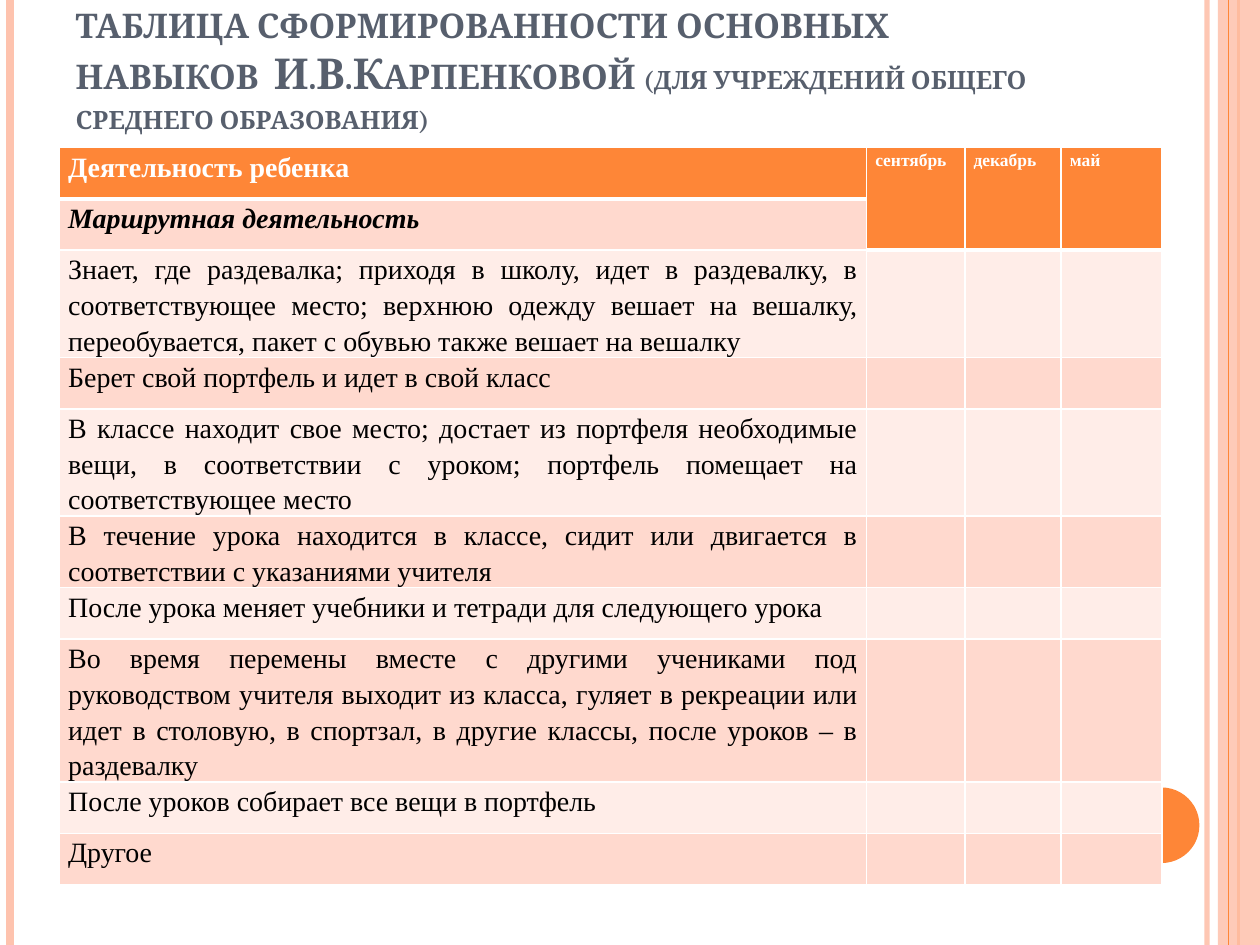
"""Build a slide with a table of a pupil's basic skills."""
from lxml.etree import SubElement
from pptx import Presentation
from pptx.dml.color import RGBColor
from pptx.enum.shapes import MSO_CONNECTOR, MSO_SHAPE
from pptx.enum.text import MSO_ANCHOR, MSO_AUTO_SIZE, PP_ALIGN
from pptx.oxml.ns import qn
from pptx.util import Pt

TITLE = [
    ("таблица сформированности основных навыков  И.В.Карпенковой ", 24.3),
    ("(для учреждений общего среднего образования)", 18),
]
HEAD = ["Деятельность ребенка", "сентябрь", "декабрь", "май"]
ROWS = [
    "Маршрутная деятельность",
    "Знает, где раздевалка; приходя в школу, идет в раздевалку, в соответствующее место; "
    "верхнюю одежду вешает на вешалку, переобувается, пакет с обувью также вешает на вешалку",
    "Берет свой портфель и идет в свой класс",
    "В классе находит свое место; достает из портфеля необходимые вещи, "
    "в соответствии с уроком; портфель помещает на соответствующее место",
    "В течение урока находится в классе, сидит или двигается "
    "в соответствии с указаниями учителя",
    "После урока меняет учебники и тетради для следующего урока",
    "Во время перемены вместе с другими учениками под руководством учителя выходит из класса, "
    "гуляет в рекреации или идет в столовую, в спортзал, в другие классы, "
    "после уроков – в раздевалку",
    "После уроков собирает все вещи в портфель",
    "Другое",
]
HUES = {"main": "FE8637", "pale": "FEC3AE", "odd": "FFD9CE", "even": "FFEDE8",
        "title": "575F6D", "white": "FFFFFF", "black": "000000"}
WIDE, HIGH = 720, 540
COLS = [461.2, 56.2, 55, 57.6]
ROW = 29.3
BARS = [(689.8, "pale", 3, 93), (5.8, "pale", 4.5, 100), (707.8, "main", 1.5, 100)]
EDGE = (702, "main", 0.75, 100)


def hue(name):
    return RGBColor.from_string(HUES[name])


def fade(part, alpha):
    for node in part.iter(qn("a:srgbClr")):
        SubElement(node, qn("a:alpha"), val=str(alpha * 1000))


def add_bar(slide, x, name, size, alpha):
    bar = slide.shapes.add_connector(MSO_CONNECTOR.STRAIGHT, Pt(x), 0, Pt(x), Pt(HIGH))
    bar.line.color.rgb = hue(name)
    bar.line.width = Pt(size)
    props = bar.element.spPr
    if alpha < 100:
        fade(props, alpha)
    SubElement(props, qn("a:effectLst"))


def add_form(slide, kind, box, name):
    form = slide.shapes.add_shape(kind, *map(Pt, box))
    form.shadow.inherit = False
    form.fill.solid()
    form.fill.fore_color.rgb = hue(name)
    form.line.fill.background()
    return form


def add_title(slide):
    title = slide.shapes.title
    title.left, title.top, title.width, title.height = map(Pt, (36, 21.6, 588.2, 90))
    frame = title.text_frame
    frame.auto_size = MSO_AUTO_SIZE.NONE
    frame.word_wrap = True
    frame.vertical_anchor = MSO_ANCHOR.BOTTOM
    frame.margin_bottom = Pt(34)
    para = frame.paragraphs[0]
    para.alignment = PP_ALIGN.LEFT
    for text, size in TITLE:
        run = para.add_run()
        run.text = text
        style(run, "Cambria", size, "title", True)
        run.font._element.set("cap", "small")


def style(run, face, size, name, bold):
    font = run.font
    font.name, font.size, font.bold = face, Pt(size), bold
    font.color.rgb = hue(name)


def edge(cell, row):
    props = cell._tc.get_or_add_tcPr()
    for side in "LRTB":
        thick = (row, side) in ((0, "B"), (1, "T"))
        line = SubElement(props, qn("a:ln" + side), w=str(Pt(3 if thick else 1)))
        fill = SubElement(line, qn("a:solidFill"))
        SubElement(fill, qn("a:srgbClr"), val=HUES["white"])


def add_cell(cell, row, col, text):
    cell.margin_left = cell.margin_right = Pt(5)
    cell.margin_top = cell.margin_bottom = 0
    edge(cell, row)
    head = row == 0 or (row == 1 and col > 0)
    cell.fill.solid()
    cell.fill.fore_color.rgb = hue("main" if head else "odd" if row % 2 else "even")
    if not text:
        return
    cell.text_frame.text = text
    para = cell.text_frame.paragraphs[0]
    para.line_spacing = 1.15
    para.alignment = PP_ALIGN.LEFT if row == col == 0 else PP_ALIGN.JUSTIFY
    run = para.runs[0]
    style(run, "Times New Roman", 10 if col else 16, "white" if head else "black", row < 2)
    run.font.italic = row == 1


def add_grid(slide):
    data = [HEAD] + [[text, "", "", ""] for text in ROWS]
    grid = slide.shapes.add_table(len(data), len(COLS), Pt(34), Pt(84.4),
                                  Pt(sum(COLS)), Pt(ROW * len(data))).table
    grid.horz_banding = False
    for col, width in enumerate(COLS):
        grid.columns[col].width = Pt(width)
    for row, texts in enumerate(data):
        for col, text in enumerate(texts):
            add_cell(grid.cell(row, col), row, col, text)
    for col in range(1, len(COLS)):
        grid.cell(0, col).merge(grid.cell(1, col))


def main():
    deck = Presentation()
    deck.slide_width, deck.slide_height = Pt(WIDE), Pt(HIGH)
    slide = deck.slides.add_slide(deck.slide_layouts[5])
    for bar in BARS:
        add_bar(slide, *bar)
    band = add_form(slide, MSO_SHAPE.RECTANGLE, (696, 0, 24, HIGH), "pale")
    fade(band.element.spPr, 87)
    add_bar(slide, *EDGE)
    add_form(slide, MSO_SHAPE.OVAL, (642.2, 450, 43.2, 43.2), "main")
    add_title(slide)
    add_grid(slide)
    deck.save("out.pptx")


if __name__ == "__main__":
    main()
